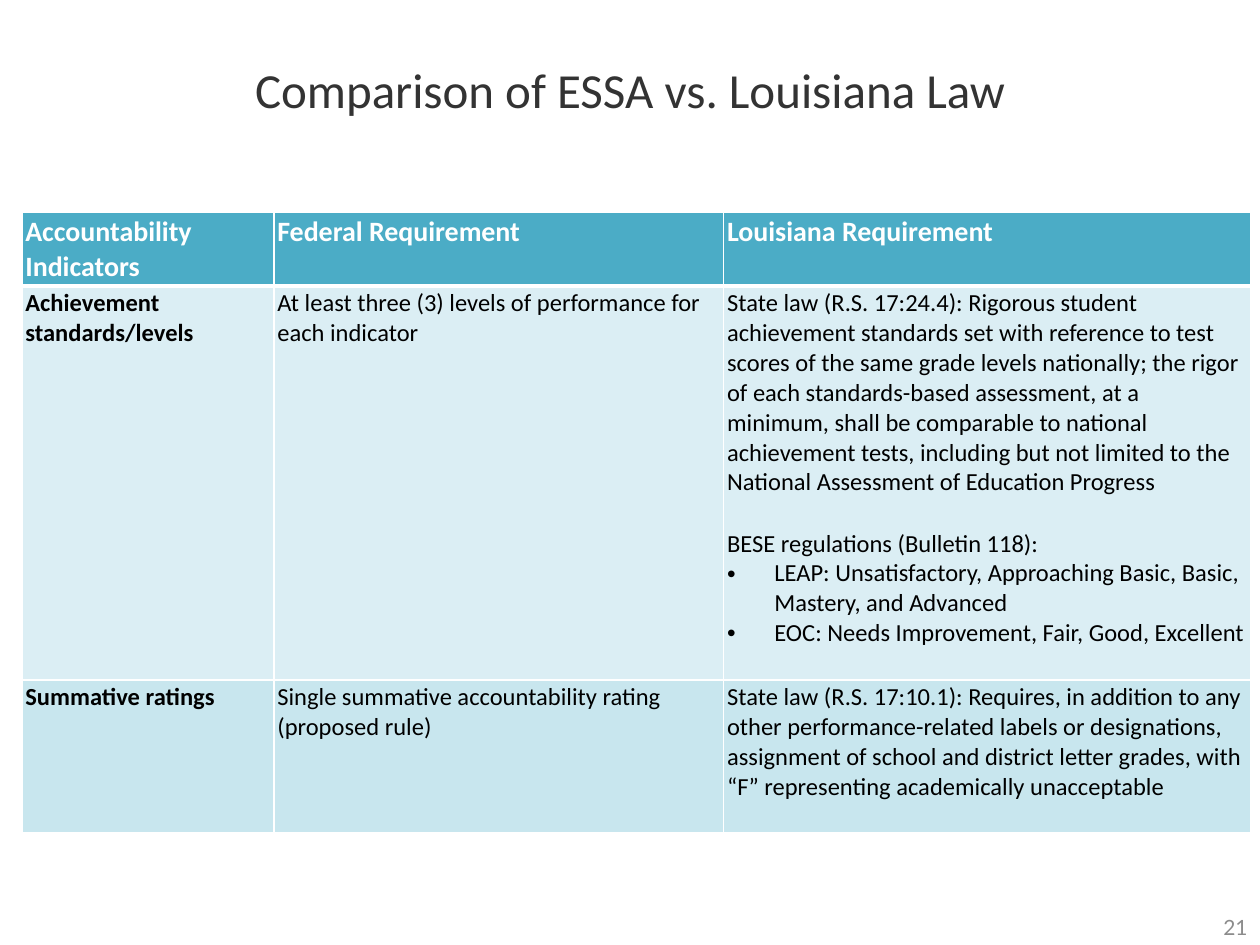
from dataclasses import dataclass

from lxml import etree
from pptx import Presentation
from pptx.dml.color import RGBColor
from pptx.enum.text import MSO_ANCHOR, PP_ALIGN
from pptx.oxml.ns import qn
from pptx.util import Pt

MIDDLE, TOP = MSO_ANCHOR.MIDDLE, MSO_ANCHOR.TOP
CENTER, LEFT, RIGHT = PP_ALIGN.CENTER, PP_ALIGN.LEFT, PP_ALIGN.RIGHT
TITLE_ONLY = 5


@dataclass(frozen=True)
class Theme:
    body_font: str = "Calibri"
    number_font: str = "Lato"
    title_size: int = 28
    header_size: int = 16
    body_size: int = 14
    number_size: int = 12
    title_color: str = "333333"
    number_color: str = "8C8C8C"
    header_color: str = "FFFFFF"
    body_color: str = "000000"
    border_color: str = "FFFFFF"
    header_fill: str = "4BACC6"
    row_fills: tuple[str, ...] = ("DBEEF4", "C8E6EE")


@dataclass(frozen=True)
class Line:
    text: str
    bullet: bool = False
    space_before: float = 0
    space_after: float = 0


@dataclass(frozen=True)
class Row:
    height: float
    cells: tuple[tuple[Line, ...], ...]


THEME = Theme()
COLUMN_WIDTHS = (144, 257, 301)
BULLET_INDENT = 27
ROWS = (
    Row(42, (
        (Line("Accountability Indicators"),),
        (Line("Federal Requirement"),),
        (Line("Louisiana Requirement"),),
    )),
    Row(225, (
        (Line("Achievement standards/levels"),),
        (Line("At least three (3) levels of performance for each indicator"),),
        (
            Line("State law (R.S. 17:24.4): Rigorous student achievement standards set with "
                 "reference to test scores of the same grade levels nationally; the rigor of "
                 "each standards-based assessment, at a minimum, shall be comparable to national "
                 "achievement tests, including but not limited to the National Assessment of "
                 "Education Progress", space_after=1),
            Line("BESE regulations (Bulletin 118):", space_before=17),
            Line("LEAP: Unsatisfactory, Approaching Basic, Basic, Mastery, and Advanced", bullet=True),
            Line("EOC: Needs Improvement, Fair, Good, Excellent", bullet=True),
        ),
    )),
    Row(87.5, (
        (Line("Summative ratings"),),
        (Line("Single summative accountability rating (proposed rule)"),),
        (Line("State law (R.S. 17:10.1): Requires, in addition to any other performance-related "
              "labels or designations, assignment of school and district letter grades, with "
              "“F” representing academically unacceptable"),),
    )),
)


def style_paragraph(paragraph, font: str, size: float, color: str, alignment, bold: bool = False) -> None:
    paragraph.alignment = alignment
    for run in paragraph.runs:
        run.font.name = font
        run.font.size = Pt(size)
        run.font.bold = bold
        run.font.color.rgb = RGBColor.from_string(color)


def add_bullet(paragraph) -> None:
    properties = paragraph._p.get_or_add_pPr()
    properties.set("marL", str(Pt(BULLET_INDENT)))
    properties.set("indent", str(-Pt(BULLET_INDENT)))
    etree.SubElement(properties, qn("a:buFont"), typeface="Arial")
    etree.SubElement(properties, qn("a:buChar"), char="•")


def add_borders(cell, bottom_width: float, top_width: float) -> None:
    properties = cell._tc.get_or_add_tcPr()
    for side, width in (("L", 1), ("R", 1), ("T", top_width), ("B", bottom_width)):
        border = etree.SubElement(properties, qn(f"a:ln{side}"), w=str(Pt(width)))
        fill = etree.SubElement(border, qn("a:solidFill"))
        etree.SubElement(fill, qn("a:srgbClr"), val=THEME.border_color)


def fill_cell(cell, lines: tuple[Line, ...], row_index: int, column_index: int) -> None:
    is_header = row_index == 0
    cell.margin_left = cell.margin_right = Pt(2)
    cell.margin_top = cell.margin_bottom = Pt(1.5)
    cell.vertical_anchor = TOP
    add_borders(cell, 3 if is_header else 1, 3 if row_index == 1 else 1)
    cell.fill.solid()
    fill = THEME.header_fill if is_header else THEME.row_fills[(row_index - 1) % 2]
    cell.fill.fore_color.rgb = RGBColor.from_string(fill)

    cell.text_frame.text = "\n".join(line.text for line in lines)
    for paragraph, line in zip(cell.text_frame.paragraphs, lines):
        if line.space_before:
            paragraph.space_before = Pt(line.space_before)
        if line.space_after:
            paragraph.space_after = Pt(line.space_after)
        if line.bullet:
            add_bullet(paragraph)
        style_paragraph(
            paragraph, THEME.body_font,
            THEME.header_size if is_header else THEME.body_size,
            THEME.header_color if is_header else THEME.body_color,
            LEFT, bold=is_header or column_index == 0,
        )


def add_title(slide, text: str) -> None:
    title = slide.shapes.title
    title.left, title.top, title.width, title.height = Pt(0), Pt(0), Pt(720), Pt(102)
    title.text_frame.text = text
    title.text_frame.vertical_anchor = MIDDLE
    style_paragraph(title.text_frame.paragraphs[0], THEME.body_font,
                    THEME.title_size, THEME.title_color, CENTER)


def add_comparison_table(slide, rows: tuple[Row, ...]) -> None:
    table = slide.shapes.add_table(
        len(rows), len(COLUMN_WIDTHS), Pt(12.5), Pt(121.5),
        Pt(sum(COLUMN_WIDTHS)), Pt(sum(row.height for row in rows)),
    ).table
    for column, width in zip(table.columns, COLUMN_WIDTHS):
        column.width = Pt(width)
    for row_index, row in enumerate(rows):
        table.rows[row_index].height = Pt(row.height)
        for column_index, lines in enumerate(row.cells):
            fill_cell(table.cell(row_index, column_index), lines, row_index, column_index)


def add_page_number(slide, text: str) -> None:
    box = slide.shapes.add_textbox(Pt(552), Pt(516), Pt(168), Pt(27))
    box.text_frame.word_wrap = True
    box.text_frame.vertical_anchor = MIDDLE
    box.text_frame.text = text
    style_paragraph(box.text_frame.paragraphs[0], THEME.number_font,
                    THEME.number_size, THEME.number_color, RIGHT)


def main() -> None:
    presentation = Presentation()
    presentation.slide_width, presentation.slide_height = Pt(720), Pt(540)
    slide = presentation.slides.add_slide(presentation.slide_layouts[TITLE_ONLY])

    # Heading, table and page number
    add_title(slide, "Comparison of ESSA vs. Louisiana Law")
    add_page_number(slide, "21")
    add_comparison_table(slide, ROWS)
    presentation.save("out.pptx")


if __name__ == "__main__":
    main()
